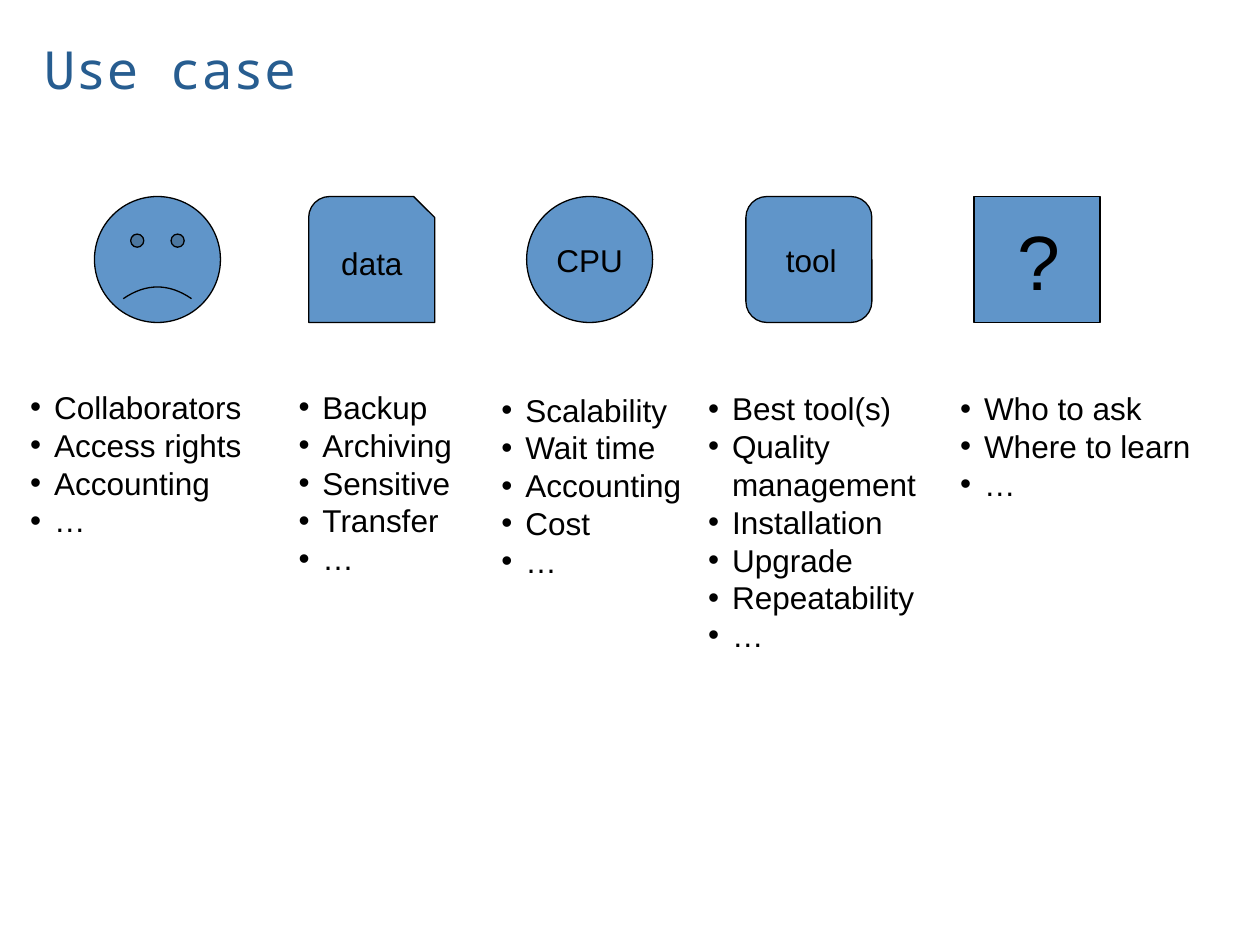
from lxml import etree
from pptx import Presentation
from pptx.dml.color import RGBColor
from pptx.enum.shapes import MSO_SHAPE
from pptx.enum.text import MSO_ANCHOR, PP_ALIGN
from pptx.oxml.ns import qn
from pptx.util import Inches, Pt

SMILEY = MSO_SHAPE.SMILEY_FACE
SNIPPED = MSO_SHAPE.SNIP_ROUND_RECTANGLE
OVAL = MSO_SHAPE.OVAL
ROUNDED = MSO_SHAPE.ROUNDED_RECTANGLE
SQUARE = MSO_SHAPE.RECTANGLE
MIDDLE, TOP = MSO_ANCHOR.MIDDLE, MSO_ANCHOR.TOP
CENTER, LEFT = PP_ALIGN.CENTER, PP_ALIGN.LEFT

BLUE = RGBColor(0x60, 0x95, 0xC9)
TITLE_BLUE = RGBColor(0x27, 0x5D, 0x90)
BLACK = RGBColor(0, 0, 0)

ICON_TOP, ICON_SIZE = Inches(1.56), Inches(1)
LINE_PITCH = Pt(21.6)
INSET = Inches(0.06)
TEXT_INDENT = Inches(0.04)
BULLET_INDENT = Inches(0.19)

# icon shape, icon left, label, label size, list left, list top, list width, items
COLUMNS = [
    (SMILEY, 0.75, "", 18, 0.18, 3.02, 1.99,
     ["Collaborators", "Access rights", "Accounting", "…"]),
    (SNIPPED, 2.45, "data", 18, 2.31, 3.02, 1.37,
     ["Backup", "Archiving", "Sensitive", "Transfer", "…"]),
    (OVAL, 4.18, "CPU", 18, 3.92, 3.04, 1.99,
     ["Scalability", "Wait time", "Accounting", "Cost", "…"]),
    (ROUNDED, 5.92, "tool", 18, 5.56, 3.03, 1.99,
     ["Best tool(s)", "Quality\vmanagement", "Installation", "Upgrade",
      "Repeatability", "…"]),
    (SQUARE, 7.73, "?", 44, 7.56, 3.03, 1.99,
     ["Who to ask", "Where to learn", "…"]),
]


def write_text(shape, lines, size, font="Arial", color=BLACK, align=LEFT,
               anchor=MIDDLE, bullets=False):
    frame = shape.text_frame
    frame.word_wrap = True
    frame.vertical_anchor = anchor
    frame.margin_top = frame.margin_right = frame.margin_bottom = INSET
    frame.margin_left = INSET if bullets else INSET + TEXT_INDENT
    frame.text = "\n".join(lines)
    for paragraph in frame.paragraphs:
        paragraph.alignment = align
        if bullets:
            paragraph.line_spacing = LINE_PITCH
            properties = paragraph._p.get_or_add_pPr()
            properties.set("marL", str(BULLET_INDENT))
            properties.set("indent", str(-BULLET_INDENT))
            etree.SubElement(properties, qn("a:buFont")).set("typeface", "Arial")
            etree.SubElement(properties, qn("a:buChar")).set("char", "•")
        # Line breaks take their height from the run, so fonts go on both.
        for item in (paragraph, *paragraph.runs):
            item.font.name = font
            item.font.size = Pt(size)
            item.font.color.rgb = color


presentation = Presentation()
presentation.slide_width = Inches(10)
presentation.slide_height = Inches(7.5)
slide = presentation.slides.add_slide(presentation.slide_layouts[6])

title = slide.shapes.add_textbox(Inches(0.25), 0, Inches(6.17), Inches(1.08))
write_text(title, ["Use case"], 30, font="Noto Sans Mono", color=TITLE_BLUE)

for kind, icon_left, label, size, left, top, width, items in COLUMNS:
    icon = slide.shapes.add_shape(kind, Inches(icon_left), ICON_TOP,
                                  ICON_SIZE, ICON_SIZE)
    icon.shadow.inherit = False
    icon.fill.solid()
    icon.fill.fore_color.rgb = BLUE
    icon.line.color.rgb = BLACK
    icon.line.width = Pt(0.75)
    if kind == SMILEY:
        icon.adjustments[0] = -0.05  # turns the smile into a frown
    if label:
        write_text(icon, [label], size, align=CENTER)
    if kind == OVAL:
        icon.text_frame.margin_left = icon.text_frame.margin_right = 0

    height = LINE_PITCH * (sum(item.count("\v") + 1 for item in items) + 1)
    topics = slide.shapes.add_textbox(Inches(left), Inches(top), Inches(width),
                                      height + 2 * INSET)
    write_text(topics, items, 18, anchor=TOP, bullets=True)

presentation.save("out.pptx")
